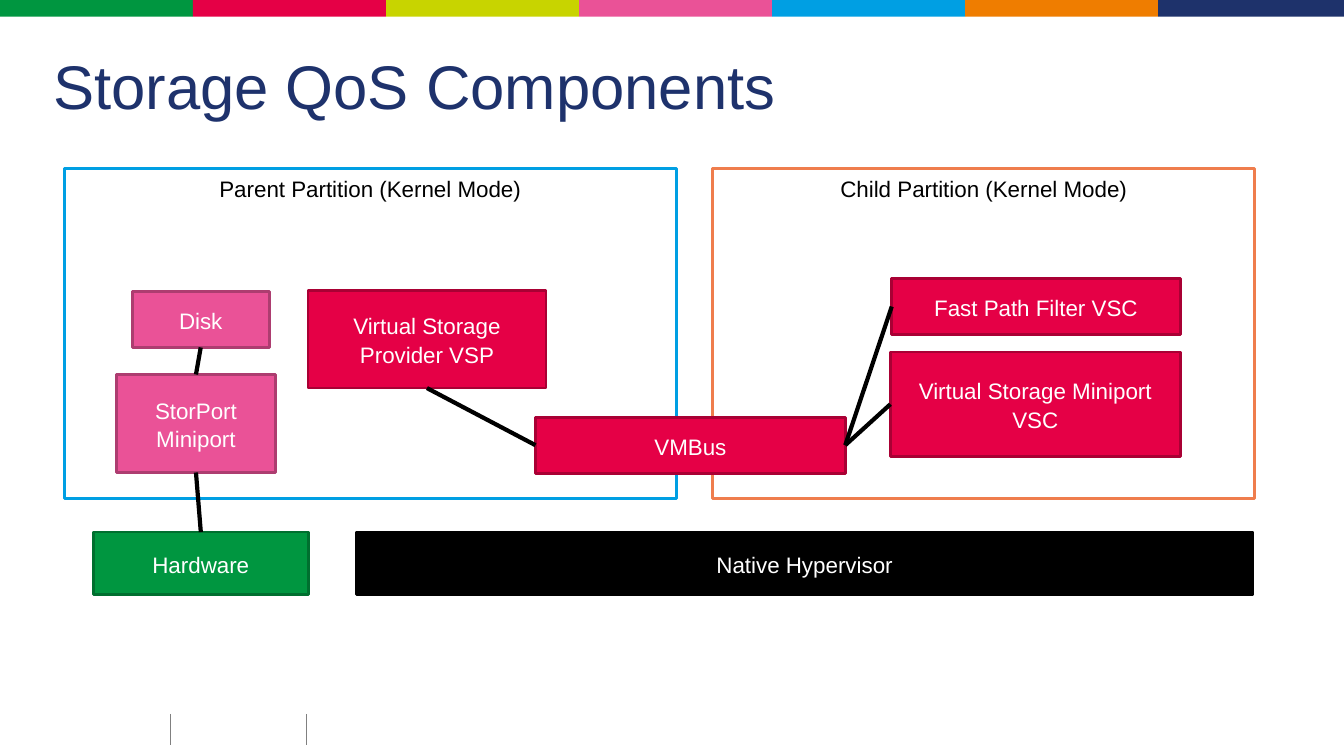
import pptx
import pptx.util
import pptx.dml.color
import pptx.enum.shapes
import pptx.enum.text
import pptx.oxml.ns
from lxml import etree

Pt = pptx.util.Pt
ANCHOR = pptx.enum.text.MSO_ANCHOR
RECTANGLE = pptx.enum.shapes.MSO_SHAPE.RECTANGLE
STRAIGHT = pptx.enum.shapes.MSO_CONNECTOR.STRAIGHT

THEME = {
    "font": "Arial", "title_size": 44, "label_size": 16,
    "title": "1E326C", "ink": "000000", "paper": "FFFFFF", "rule": "808080",
    "stripes": ["009640", "E50046", "C8D400", "EA5297", "009FE3", "EF7D00", "1E326B"],
    "parent": ("FFFFFF", "009FE3", "000000"),
    "child": ("FFFFFF", "EF7D4D", "000000"),
    "virtual": ("E50046", "A90034", "FFFFFF"),
    "port": ("EA5297", "AD3D70", "FFFFFF"),
    "hardware": ("009640", "006F2F", "FFFFFF"),
    "hypervisor": ("000000", "000000", "FFFFFF"),
}


def rgb(value):
    return pptx.dml.color.RGBColor.from_string(value)


def add_line(ends, color, width):
    line = slide.shapes.add_connector(STRAIGHT, *(Pt(v) for v in ends))
    line.line.color.rgb = rgb(color)
    line.line.width = Pt(width)
    etree.SubElement(line._element.spPr, pptx.oxml.ns.qn("a:effectLst"))
    return line


deck = pptx.Presentation()
deck.slide_width, deck.slide_height = Pt(960), Pt(540)
slide = deck.slides.add_slide(deck.slide_layouts[6])

stripe_width = 137.88
for index, color in enumerate(THEME["stripes"]):
    left = index * stripe_width
    stripe = slide.shapes.add_shape(
        RECTANGLE, Pt(left), Pt(0), Pt(min(stripe_width, 960 - left)), Pt(12))
    stripe.shadow.inherit = False
    stripe.fill.solid()
    stripe.fill.fore_color.rgb = rgb(color)
    stripe.line.fill.background()

for x in (121.7, 218.9):
    add_line((x, 510, x, 532), THEME["rule"], 1)

heading = slide.shapes.add_textbox(Pt(38), Pt(28), Pt(887), Pt(65.5))
heading_format = {
    "word_wrap": True, "vertical_anchor": ANCHOR.MIDDLE,
    "margin_left": 0, "margin_right": 0, "margin_top": 0, "margin_bottom": 0,
}
for key, value in heading_format.items():
    setattr(heading.text_frame, key, value)
heading.text_frame.text = "Storage QoS Components"
heading_font = heading.text_frame.paragraphs[0].font
heading_font.name = THEME["font"]
heading_font.size = Pt(THEME["title_size"])
heading_font.color.rgb = rgb(THEME["title"])

label_format = {
    "alignment": pptx.enum.text.PP_ALIGN.CENTER,
    "line_spacing": 1.07,
    "space_after": Pt(8),
}
components = [
    ("parent", "Parent Partition (Kernel Mode)", "parent", (46, 120.2, 437, 236)),
    ("child", "Child Partition (Kernel Mode)", "child", (509.2, 120.2, 387, 236)),
    ("filter", "Fast Path Filter VSC", "virtual", (637, 199, 206, 40)),
    ("miniport", "Virtual Storage Miniport VSC", "virtual", (636, 251.5, 207, 74.5)),
    ("bus", "VMBus", "virtual", (382.5, 298, 221.3, 40)),
    ("provider", "Virtual Storage Provider VSP", "virtual", (220, 207.2, 170, 70)),
    ("disk", "Disk", "port", (94.5, 208.2, 97.8, 40)),
    ("storport", "StorPort Miniport", "port", (83, 267.5, 114, 70)),
    ("hardware", "Hardware", "hardware", (66.7, 380, 153.5, 44.5)),
    ("hypervisor", "Native Hypervisor", "hypervisor", (254.5, 380, 640.5, 44.5)),
]
placed = {}
for key, label, style, bounds in components:
    fill, outline, ink = THEME[style]
    component = slide.shapes.add_shape(RECTANGLE, *(Pt(v) for v in bounds))
    component.shadow.inherit = False
    component.fill.solid()
    component.fill.fore_color.rgb = rgb(fill)
    component.line.color.rgb = rgb(outline)
    component.line.width = Pt(2)
    frame = component.text_frame
    frame.word_wrap = True
    frame.vertical_anchor = ANCHOR.TOP if key in ("parent", "child") else ANCHOR.MIDDLE
    frame.text = label
    paragraph = frame.paragraphs[0]
    for name, value in label_format.items():
        setattr(paragraph, name, value)
    paragraph.font.name = THEME["font"]
    paragraph.font.size = Pt(THEME["label_size"])
    paragraph.font.color.rgb = rgb(ink)
    placed[key] = component

TOP, LEFT, BOTTOM, RIGHT = range(4)
links = [
    ("filter", LEFT, "bus", RIGHT),
    ("miniport", LEFT, "bus", RIGHT),
    ("bus", LEFT, "provider", BOTTOM),
    ("disk", BOTTOM, "storport", TOP),
    ("storport", BOTTOM, "hardware", TOP),
]
for source, source_side, target, target_side in links:
    link = add_line((0, 0, 0, 0), THEME["ink"], 3)
    link.begin_connect(placed[source], source_side)
    link.end_connect(placed[target], target_side)

deck.save("out.pptx")
